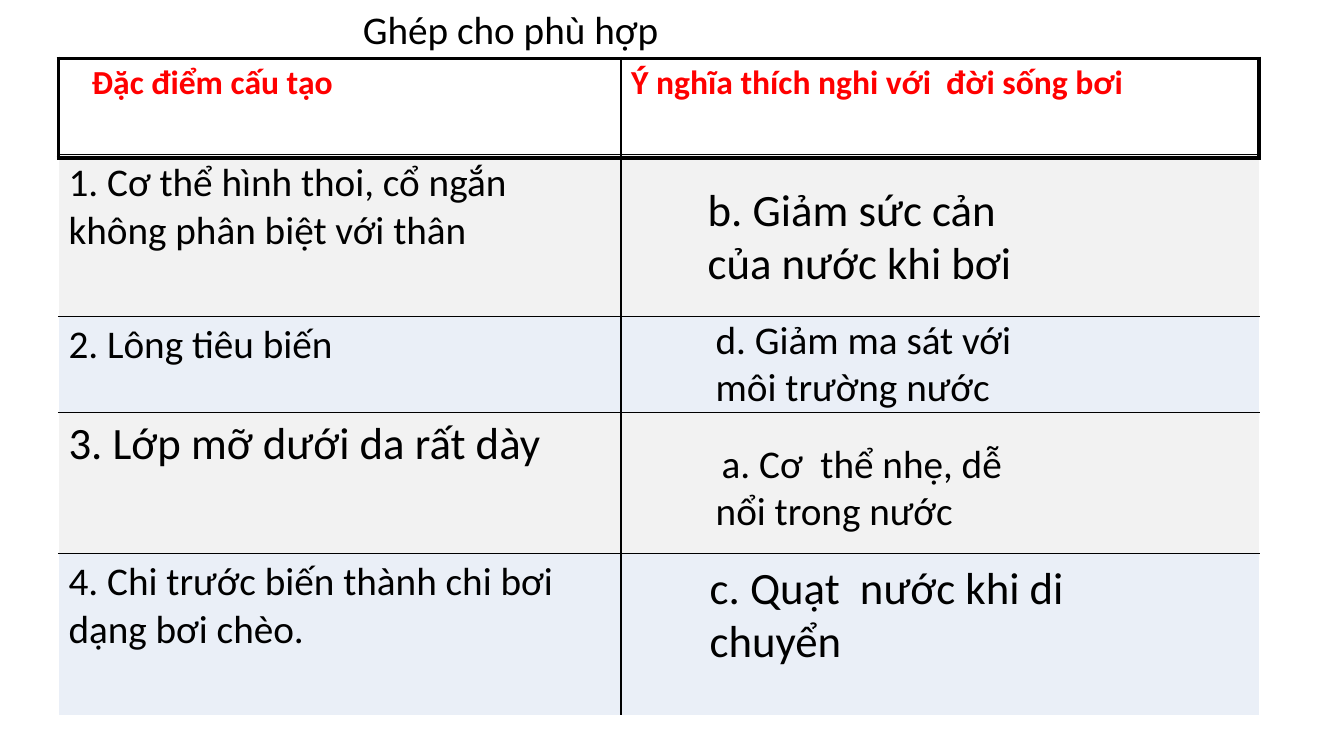
"""Build a slide matching body features with their role in swimming."""
from lxml.etree import SubElement
from pptx import Presentation
from pptx.dml.color import RGBColor
from pptx.enum.text import MSO_ANCHOR, PP_ALIGN
from pptx.oxml.ns import qn
from pptx.util import Inches, Pt

TITLE = "Ghép cho phù hợp"
HEADERS = ["Đặc điểm cấu tạo", "Ý nghĩa thích nghi với  đời sống bơi"]
FEATURES = [
    ("1. Cơ thể hình thoi, cổ ngắn không phân biệt với thân", 28),
    ("2. Lông tiêu biến", 28),
    ("3. Lớp mỡ dưới da rất dày", 32),
    ("4. Chi trước biến thành chi bơi dạng bơi chèo.", 28),
]
MEANINGS = [
    ("a. Cơ  thể nhẹ, dễ nổi trong nước", 28, (7, 4.31, 3.08, 1.04), 0.06),
    ("b. Giảm sức cản của nước khi bơi", 32, (6.92, 1.75, 3.58, 1.18), 0),
    ("c. Quạt  nước khi di chuyển", 32, (6.94, 5.5, 3.79, 1.18), 0),
    ("d. Giảm ma sát với môi trường nước", 28, (7, 3.08, 3.67, 1.04), 0),
]
LEFT, TOP = 0.58, 0.57
COLS = [5.58, 6.33]
ROWS = [0.96, 1.61, 0.95, 1.4, 1.61]
FRAME_TOP, FRAME_HEIGHT = 0.58, 0.99
BLACK, WHITE, RED = "000000", "FFFFFF", "FF0000"
BANDS = ["EAEFF7", "F2F2F2"]


def rgb(value):
    return RGBColor.from_string(value)


def write(tf, text, size, color=BLACK, bold=False):
    tf.text = text
    p = tf.paragraphs[0]
    p.alignment = PP_ALIGN.LEFT
    font = p.runs[0].font
    font.name, font.size, font.bold = "Calibri", Pt(size), bold
    font.color.rgb = rgb(color)
    return p


def set_borders(cell, colors, width):
    tc_pr = cell._tc.get_or_add_tcPr()
    for side, color in zip("LRTB", colors):
        ln = SubElement(tc_pr, qn(f"a:ln{side}"), w=str(Pt(width)))
        SubElement(SubElement(ln, qn("a:solidFill")), qn("a:srgbClr"), val=color)


def add_grid(slide, top, cols, rows):
    frame = slide.shapes.add_table(len(rows), len(cols), Inches(LEFT), Inches(top),
                                   Inches(sum(cols)), Inches(sum(rows)))
    table = frame.table
    table.first_row = table.horz_banding = False
    for column, width in zip(table.columns, cols):
        column.width = Inches(width)
    for row, height in zip(table.rows, rows):
        row.height = Inches(height)
    return table


def add_matching_table(slide):
    table = add_grid(slide, TOP, COLS, ROWS)
    last_row, last_col = len(ROWS) - 1, len(COLS) - 1
    for i in range(len(ROWS)):
        for j in range(len(COLS)):
            cell = table.cell(i, j)
            edges = (j == 0, j == last_col, i == 0, i == last_row)
            set_borders(cell, [WHITE if edge else BLACK for edge in edges], 1)
            cell.fill.solid()
            cell.fill.fore_color.rgb = rgb(BANDS[i % 2] if i else WHITE)
    for j, header in enumerate(HEADERS):
        write(table.cell(0, j).text_frame, header, 24, RED, True)
    table.cell(0, 0).margin_left = Inches(0.33)
    for i, (text, size) in enumerate(FEATURES, 1):
        write(table.cell(i, 0).text_frame, text, size)


def add_header_frame(slide):
    cell = add_grid(slide, FRAME_TOP, [sum(COLS)], [FRAME_HEIGHT]).cell(0, 0)
    set_borders(cell, [BLACK] * 4, 3)
    cell.fill.background()


def add_title(slide):
    title = slide.shapes.title
    title.left, title.top = Inches(3.5), Inches(0)
    title.width, title.height = Inches(6.58), Inches(0.57)
    title.text_frame.vertical_anchor = MSO_ANCHOR.TOP
    write(title.text_frame, TITLE, 28).line_spacing = 1
    title.text_frame.paragraphs[0].space_before = Pt(0)


def add_meanings(slide):
    for text, size, box, indent in MEANINGS:
        tf = slide.shapes.add_textbox(*map(Inches, box)).text_frame
        tf.word_wrap = True
        p = write(tf, text, size)
        if indent:
            p._p.get_or_add_pPr().set("indent", str(Inches(indent)))


def main():
    prs = Presentation()
    prs.slide_width, prs.slide_height = Inches(13.33), Inches(7.5)
    s = prs.slides.add_slide(prs.slide_layouts[5])
    add_title(s)
    add_matching_table(s)
    add_meanings(s)
    add_header_frame(s)
    prs.save("out.pptx")


if __name__ == "__main__":
    main()
